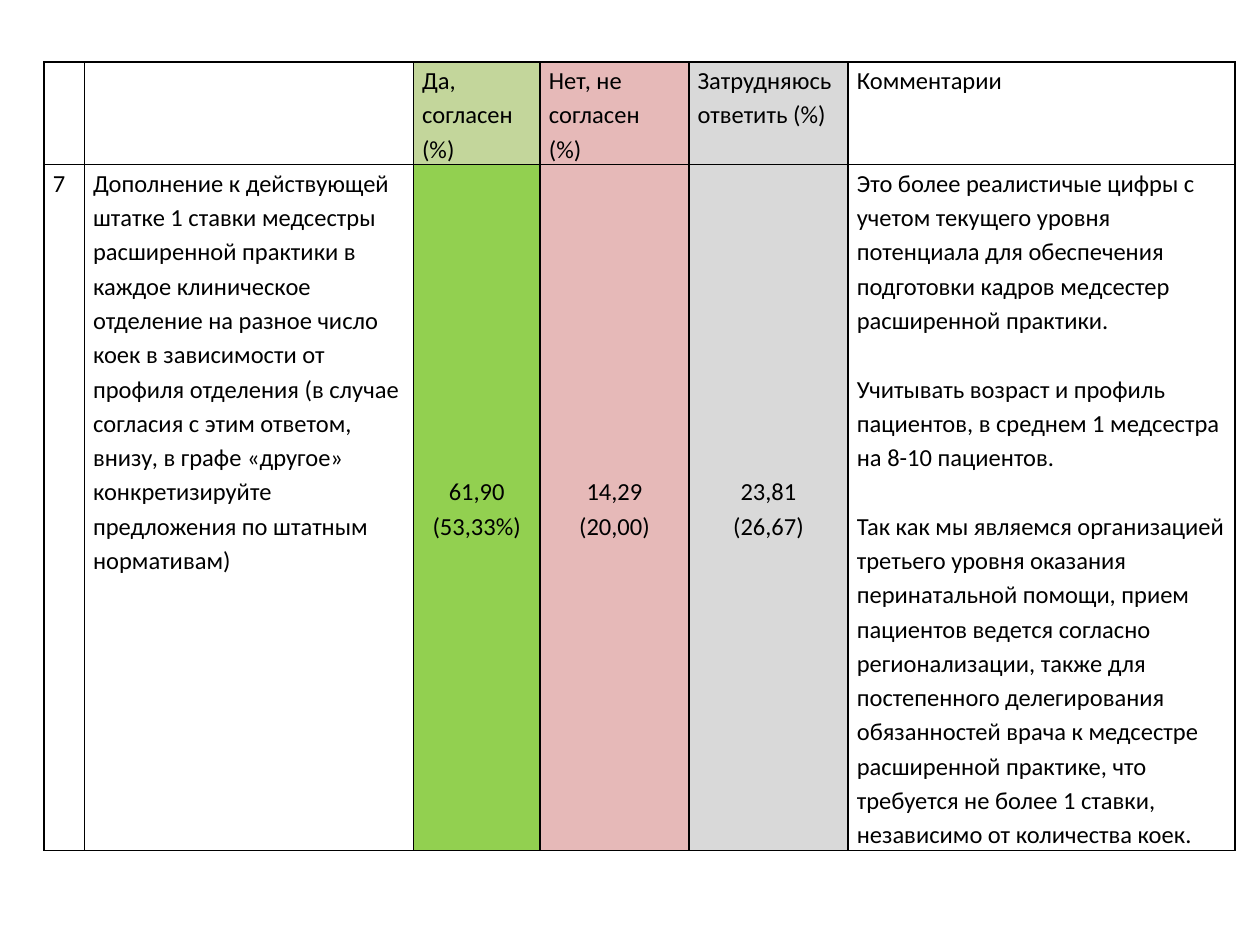
from lxml import etree
from pptx import Presentation
from pptx.dml.color import RGBColor
from pptx.enum import text
from pptx.oxml import ns
from pptx.util import Pt

HEADER = [
    [],
    [],
    ["Да, согласен", "(%)"],
    ["Нет, не согласен", "(%)"],
    ["Затрудняюсь ответить (%)"],
    ["Комментарии"],
]
ANSWER = [
    ["7"],
    ["Дополнение к действующей штатке 1 ставки медсестры расширенной практики "
     "в каждое клиническое отделение на разное число коек в зависимости от "
     "профиля отделения (в случае согласия с этим ответом, внизу, в графе "
     "«другое» конкретизируйте предложения по штатным нормативам)"],
    ["61,90", "(53,33%)"],
    ["14,29", "(20,00)"],
    ["23,81", "(26,67)"],
    ["Это более реалистичые цифры с учетом текущего уровня потенциала для "
     "обеспечения подготовки кадров медсестер расширенной практики.",
     "Учитывать возраст и профиль пациентов, в среднем 1 медсестра "
     "на 8-10 пациентов.",
     "Так как мы являемся организацией третьего уровня оказания перинатальной "
     "помощи, прием пациентов ведется согласно регионализации, также для "
     "постепенного делегирования обязанностей врача к медсестре расширенной "
     "практике, что требуется не более 1 ставки, независимо от количества коек."],
]
ROWS = [HEADER, ANSWER]
FILLS = [
    [None, None, "C3D69B", "E6B9B8", "D9D9D9", None],
    [None, None, "92D050", "E6B9B8", "D9D9D9", None],
]
COLUMN_WIDTHS = [23, 188, 72.5, 85, 91, 221]
ROW_HEIGHTS = [57, 387.5]
LEFT, TOP = 25.2, 35.3
PERCENT_COLUMNS = range(2, 5)
COMMENT_COLUMN = 5
BLACK = "000000"
FONT, FONT_SIZE, LINE_SPACING = "Calibri", 14, 1.15
COMMENT_GAP = 19.6  # one line of text


def color(value):
    return RGBColor.from_string(value)


def add_borders(cell):
    properties = cell._tc.get_or_add_tcPr()
    for index, side in enumerate(("lnL", "lnR", "lnT", "lnB")):
        line = etree.Element(ns.qn(f"a:{side}"), w=str(Pt(1)))
        fill = etree.SubElement(line, ns.qn("a:solidFill"))
        etree.SubElement(fill, ns.qn("a:srgbClr"), val=BLACK)
        properties.insert(index, line)


def write_paragraphs(cell, lines, centered, gap):
    frame = cell.text_frame
    for index, line in enumerate(lines):
        paragraph = frame.add_paragraph() if index else frame.paragraphs[0]
        paragraph.line_spacing = LINE_SPACING
        if index and gap:
            paragraph.space_before = Pt(gap)
        if centered:
            paragraph.alignment = text.PP_ALIGN.CENTER
        run = paragraph.add_run()
        run.text = line
        run.font.name = FONT
        run.font.size = Pt(FONT_SIZE)
        run.font.bold = False
        run.font.color.rgb = color(BLACK)


def format_cell(cell, fill, centered):
    cell.margin_left = cell.margin_right = Pt(5)
    cell.margin_top = cell.margin_bottom = 0
    if centered:
        cell.vertical_anchor = text.MSO_ANCHOR.MIDDLE
    if fill:
        cell.fill.solid()
        cell.fill.fore_color.rgb = color(fill)
    else:
        cell.fill.background()
    add_borders(cell)


def main():
    presentation = Presentation()
    presentation.slide_width, presentation.slide_height = Pt(720), Pt(540)
    slide = presentation.slides.add_slide(presentation.slide_layouts[6])
    table = slide.shapes.add_table(
        len(ROWS), len(COLUMN_WIDTHS), Pt(LEFT), Pt(TOP),
        Pt(sum(COLUMN_WIDTHS)), Pt(sum(ROW_HEIGHTS))).table
    table.first_row = table.horz_banding = False
    for column, width in zip(table.columns, COLUMN_WIDTHS):
        column.width = Pt(width)
    for row, height in zip(table.rows, ROW_HEIGHTS):
        row.height = Pt(height)

    for row_index, (contents, fills) in enumerate(zip(ROWS, FILLS)):
        for column_index, (lines, fill) in enumerate(zip(contents, fills)):
            cell = table.cell(row_index, column_index)
            centered = row_index > 0 and column_index in PERCENT_COLUMNS
            gap = COMMENT_GAP if column_index == COMMENT_COLUMN else 0
            write_paragraphs(cell, lines, centered, gap)
            format_cell(cell, fill, centered)

    presentation.save("out.pptx")


if __name__ == "__main__":
    main()
